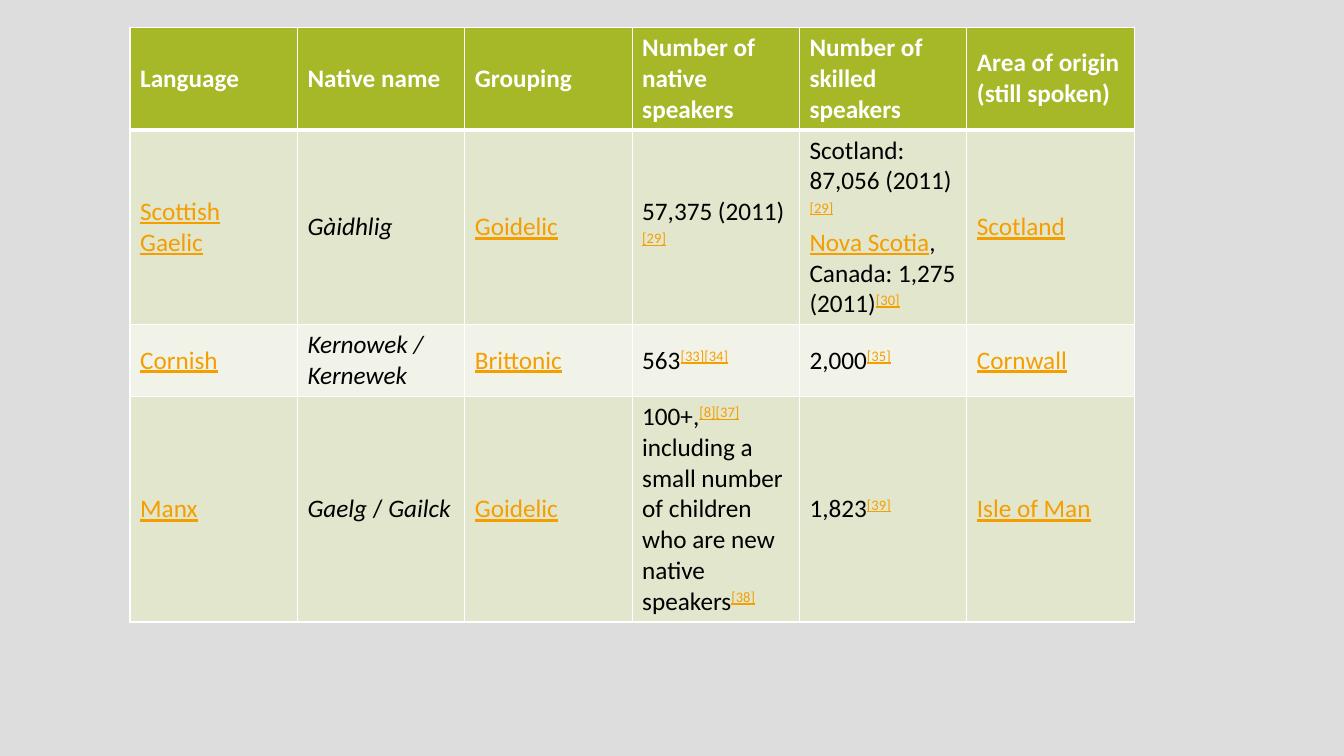
from lxml.etree import SubElement
from pptx import Presentation
from pptx.dml.color import RGBColor
from pptx.enum.text import MSO_VERTICAL_ANCHOR as Anchor
from pptx.oxml.ns import qn
from pptx.util import Inches, Pt

COLORS = {
    "background": "DDDDDD",
    "header": "A6B727",
    "odd row": "E1E6CD",
    "even row": "F1F3E8",
    "white": "FFFFFF",
    "text": "000000",
    "link": "F59E00",
}

FORMATS = {
    "header": {"bold": True, "italic": False, "underline": False},
    "plain": {"bold": False, "italic": False, "underline": False},
    "native": {"bold": False, "italic": True, "underline": False},
    "link": {"bold": False, "italic": False, "underline": True},
    "note": {"bold": False, "italic": False, "underline": True},
}
FORMAT_COLORS = {"header": "white", "plain": "text", "native": "text",
                 "link": "link", "note": "link"}

HEADINGS = ["Language", "Native name", "Grouping", "Number of native speakers",
            "Number of skilled speakers", "Area of origin\n(still spoken)"]

# Each cell is a list of (format, text) spans.
LANGUAGES = [
    [
        [("link", "Scottish Gaelic")],
        [("native", "Gàidhlig")],
        [("link", "Goidelic")],
        [("plain", "57,375 (2011)"), ("note", "[29]")],
        [("plain", "Scotland: 87,056 (2011)"), ("note", "[29]\n"),
         ("link", "Nova Scotia"), ("plain", ", Canada: 1,275 (2011)"),
         ("note", "[30]")],
        [("link", "Scotland")],
    ],
    [
        [("link", "Cornish")],
        [("native", "Kernowek / Kernewek")],
        [("link", "Brittonic")],
        [("plain", "563"), ("note", "[33][34]")],
        [("plain", "2,000"), ("note", "[35]")],
        [("link", "Cornwall")],
    ],
    [
        [("link", "Manx")],
        [("native", "Gaelg"), ("plain", " / "), ("native", "Gailck")],
        [("link", "Goidelic")],
        [("plain", "100+,"), ("note", "[8][37]"),
         ("plain", " including a small number of children who are new "
                   "native speakers"),
         ("note", "[38]")],
        [("plain", "1,823"), ("note", "[39]")],
        [("link", "Isle of Man")],
    ],
]

COLUMN_WIDTH = 1.66
ROW_HEIGHTS = [1.02, 1.92, 0.71, 2.24]


def color(name):
    return RGBColor.from_string(COLORS[name])


class LanguageSlide:
    font_name = "Calibri"
    font_size = Pt(18)

    def __init__(self, deck):
        self.slide = deck.slides.add_slide(deck.slide_layouts[6])
        fill = self.slide.background.fill
        fill.solid()
        fill.fore_color.rgb = color("background")

    def add_table(self, left, top, rows, column_width, row_heights):
        columns = len(rows[0])
        frame = self.slide.shapes.add_table(
            len(rows), columns, Inches(left), Inches(top),
            Inches(column_width * columns), Inches(sum(row_heights)))
        table = frame.table
        for column in table.columns:
            column.width = Inches(column_width)
        for row, height in zip(table.rows, row_heights):
            row.height = Inches(height)
        for row_index, row in enumerate(rows):
            for column_index, spans in enumerate(row):
                self.fill_cell(table.cell(row_index, column_index),
                               row_index, spans)

    def fill_cell(self, cell, row_index, spans):
        thick_sides = {0: "B", 1: "T"}.get(row_index, "")
        for side in "LRTB":
            self.add_border(cell, side, 3 if side in thick_sides else 1)
        band = "odd row" if row_index % 2 else "even row"
        cell.fill.solid()
        cell.fill.fore_color.rgb = color(band if row_index else "header")
        cell.vertical_anchor = Anchor.MIDDLE
        for format_name, text in spans:
            self.add_span(cell.text_frame.paragraphs[0], format_name, text)

    def add_border(self, cell, side, width):
        properties = cell._tc.get_or_add_tcPr()
        line = SubElement(properties, qn(f"a:ln{side}"), w=str(Pt(width)))
        fill = SubElement(line, qn("a:solidFill"))
        SubElement(fill, qn("a:srgbClr"), val=COLORS["white"])

    def add_span(self, para, format_name, text):
        """Add text to the paragraph, with a line break at each newline."""
        for index, part in enumerate(text.split("\n")):
            if index:
                para.add_line_break()
            if not part:
                continue
            span = para.add_run()
            span.text = part
            values = {"name": self.font_name, "size": self.font_size,
                      **FORMATS[format_name]}
            for attribute, value in values.items():
                setattr(span.font, attribute, value)
            span.font.color.rgb = color(FORMAT_COLORS[format_name])
            if format_name == "note":
                span._r.get_or_add_rPr().set("baseline", "30000")


def main():
    deck = Presentation()
    deck.slide_width = Inches(13.33)
    deck.slide_height = Inches(7.5)
    header = [[("header", heading)] for heading in HEADINGS]
    LanguageSlide(deck).add_table(1.29, 0.27, [header] + LANGUAGES,
                                  COLUMN_WIDTH, ROW_HEIGHTS)
    deck.save("out.pptx")


if __name__ == "__main__":
    main()
